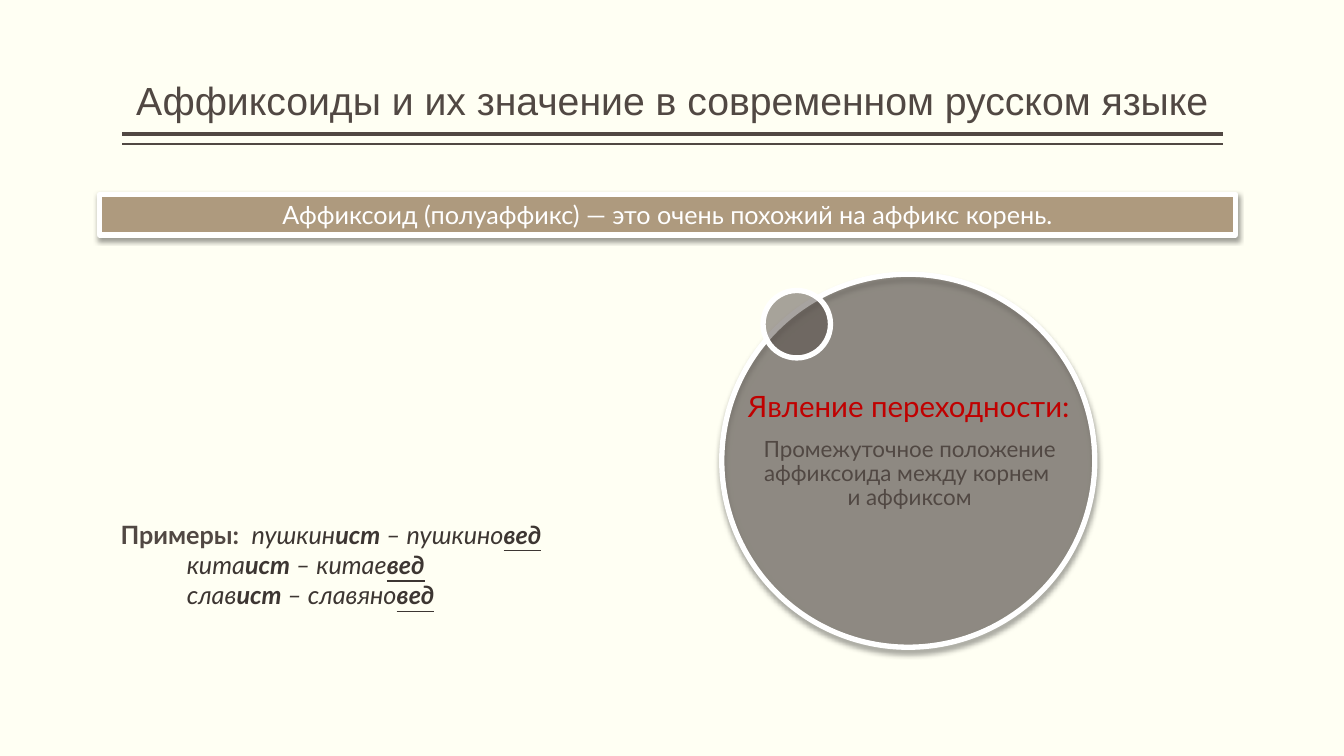
from dataclasses import dataclass

from lxml import etree
from pptx import Presentation
from pptx.dml.color import RGBColor
from pptx.enum.shapes import MSO_CONNECTOR, MSO_SHAPE
from pptx.enum.text import MSO_ANCHOR, MSO_AUTO_SIZE, PP_ALIGN
from pptx.oxml.ns import qn
from pptx.util import Cm, Pt

STRAIGHT = MSO_CONNECTOR.STRAIGHT
RECTANGLE, OVAL = MSO_SHAPE.RECTANGLE, MSO_SHAPE.OVAL
TOP, MIDDLE, BOTTOM = MSO_ANCHOR.TOP, MSO_ANCHOR.MIDDLE, MSO_ANCHOR.BOTTOM
LEFT, CENTER = PP_ALIGN.LEFT, PP_ALIGN.CENTER
NO_FIT = MSO_AUTO_SIZE.NONE
TITLE_ONLY = 5


@dataclass(frozen=True)
class Theme:
    background: str = "FFFFF3"
    brown: str = "514843"
    dark: str = "3D3632"
    tan: str = "AE9A7E"
    white: str = "FFFFFF"
    red: str = "C00000"
    heading_font: str = "Arial"
    body_font: str = "Lato"
    title_size: float = 28
    label_size: float = 21
    body_size: float = 18
    detail_size: float = 16
    outline: float = 3.8


THEME = Theme()
EXAMPLES = [("пушкин", "пушкино"), ("кита", "китае"), ("слав", "славяно")]


def rgb(color):
    return RGBColor.from_string(color)


def add_run(paragraph, text, size, color, font=THEME.body_font,
            bold=False, italic=False, underline=False):
    run = paragraph.add_run()
    run.text = text
    style = run.font
    style.name, style.size, style.color.rgb = font, Pt(size), rgb(color)
    style.bold, style.italic, style.underline = bold, italic, underline


def set_frame(frame, anchor, side=0.25, edge=0.13):
    frame.word_wrap = True
    frame.auto_size = NO_FIT
    frame.vertical_anchor = anchor
    frame.margin_left = frame.margin_right = Cm(side)
    frame.margin_top = frame.margin_bottom = Cm(edge)
    return frame


def add_text_area(slide, left, top, width, height, anchor, side, edge):
    area = slide.shapes.add_textbox(Cm(left), Cm(top), Cm(width), Cm(height))
    return set_frame(area.text_frame, anchor, side, edge)


def set_alpha(color_parent, percent):
    color = color_parent.find(".//" + qn("a:srgbClr"))
    etree.SubElement(color, qn("a:alpha"), val=str(percent * 1000))


def add_shadow(shape, blur, distance, percent):
    effects = shape._element.spPr.find(qn("a:effectLst"))
    shadow = etree.SubElement(
        effects, qn("a:outerShdw"), blurRad=str(Pt(blur)),
        dist=str(Pt(distance)), dir="5400000", rotWithShape="0")
    etree.SubElement(shadow, qn("a:srgbClr"), val="000000")
    set_alpha(shadow, percent)


def add_outlined(slide, kind, left, top, width, height, fill):
    shape = slide.shapes.add_shape(kind, Cm(left), Cm(top), Cm(width), Cm(height))
    shape.fill.solid()
    shape.fill.fore_color.rgb = rgb(fill)
    shape.line.color.rgb = rgb(THEME.white)
    shape.line.width = Pt(THEME.outline)
    shape.shadow.inherit = False
    return shape


def add_heading(slide, left, top, width, height):
    for offset, weight in ((0.13, 3), (0.38, 1)):
        y = Cm(top + height + offset)
        rule = slide.shapes.add_connector(STRAIGHT, Cm(left + width), y, Cm(left), y)
        rule.line.color.rgb = rgb(THEME.brown)
        rule.line.width = Pt(weight)
        etree.SubElement(rule._element.spPr, qn("a:effectLst"))
    title = slide.shapes.title
    title.left, title.top = Cm(left), Cm(top)
    title.width, title.height = Cm(width), Cm(height)
    paragraph = set_frame(title.text_frame, BOTTOM, side=0).paragraphs[0]
    paragraph.alignment = CENTER
    paragraph.line_spacing = 0.9
    add_run(paragraph, "Аффиксоиды и их значение в современном русском языке",
            THEME.title_size, THEME.brown, THEME.heading_font)


def add_definition(slide, left, top, width, height):
    banner = add_outlined(slide, RECTANGLE, left, top, width, height, THEME.tan)
    add_shadow(banner, blur=3.5, distance=2, percent=38)
    paragraph = set_frame(banner.text_frame, MIDDLE).paragraphs[0]
    paragraph.alignment = CENTER
    add_run(paragraph, "Аффиксоид (полуаффикс) — это очень похожий на аффикс корень.",
            THEME.body_size, THEME.white)


def add_examples(slide, left, top, width, height):
    frame = add_text_area(slide, left, top, width, height, TOP, 0.25, 0.13)
    size = THEME.body_size
    for index, (person_stem, scholar_stem) in enumerate(EXAMPLES):
        paragraph = frame.add_paragraph() if index else frame.paragraphs[0]
        paragraph.alignment = LEFT
        properties = paragraph._p.get_or_add_pPr()
        if index:
            properties.set("marL", str(Cm(1.67)))
            properties.set("indent", "0")
        else:
            tabs = etree.SubElement(properties, qn("a:tabLst"))
            etree.SubElement(tabs, qn("a:tab"), pos=str(Cm(3.3)), algn="l")
            add_run(paragraph, "Примеры:\t", size, THEME.brown, bold=True)
        for text, bold, underline in (
            (person_stem, False, False),
            ("ист", True, False),
            (f" – {scholar_stem}", False, False),
            ("вед", True, True),
        ):
            add_run(paragraph, text, size, THEME.dark,
                    bold=bold, italic=True, underline=underline)


def add_transition(slide, left, top, diameter):
    circle = add_outlined(slide, OVAL, left, top, diameter, diameter, THEME.brown)
    add_shadow(circle, blur=4, distance=3, percent=40)
    bubble = add_outlined(slide, OVAL, left + 1.04, top + 0.41, 1.7, 1.7, THEME.brown)
    for disc in (circle, bubble):
        set_alpha(disc._element.spPr.find(qn("a:solidFill")), 50)

    label = add_text_area(slide, left + 0.66, top + 2.51, 9.04, 1.7, MIDDLE, 0, 0.08)
    label_line = label.paragraphs[0]
    label_line.line_spacing = 0.9
    add_run(label_line, "Явление переходности:", THEME.label_size, THEME.red)

    detail = add_text_area(slide, left + 0.48, top + 4.04, 8.51, 2, MIDDLE, 0, 0.05)
    detail_line = detail.paragraphs[0]
    detail_line.alignment = CENTER
    detail_line.line_spacing = 0.9
    add_run(detail_line, "Промежуточное положение аффиксоида между корнем ",
            THEME.detail_size, THEME.brown)
    detail_line.add_line_break()
    add_run(detail_line, "и аффиксом", THEME.detail_size, THEME.brown)


def main():
    deck = Presentation()
    deck.slide_width, deck.slide_height = Cm(33.87), Cm(19.05)
    slide = deck.slides.add_slide(deck.slide_layouts[TITLE_ONLY])
    slide.background.fill.solid()
    slide.background.fill.fore_color.rgb = rgb(THEME.background)
    add_heading(slide, 3.07, 0.2, 27.74, 3.05)
    add_definition(slide, 2.51, 4.9, 28.63, 1.02)
    add_examples(slide, 2.79, 12.95, 16.94, 2.57)
    add_transition(slide, 18.19, 6.91, 9.4)
    deck.save("out.pptx")


if __name__ == "__main__":
    main()
